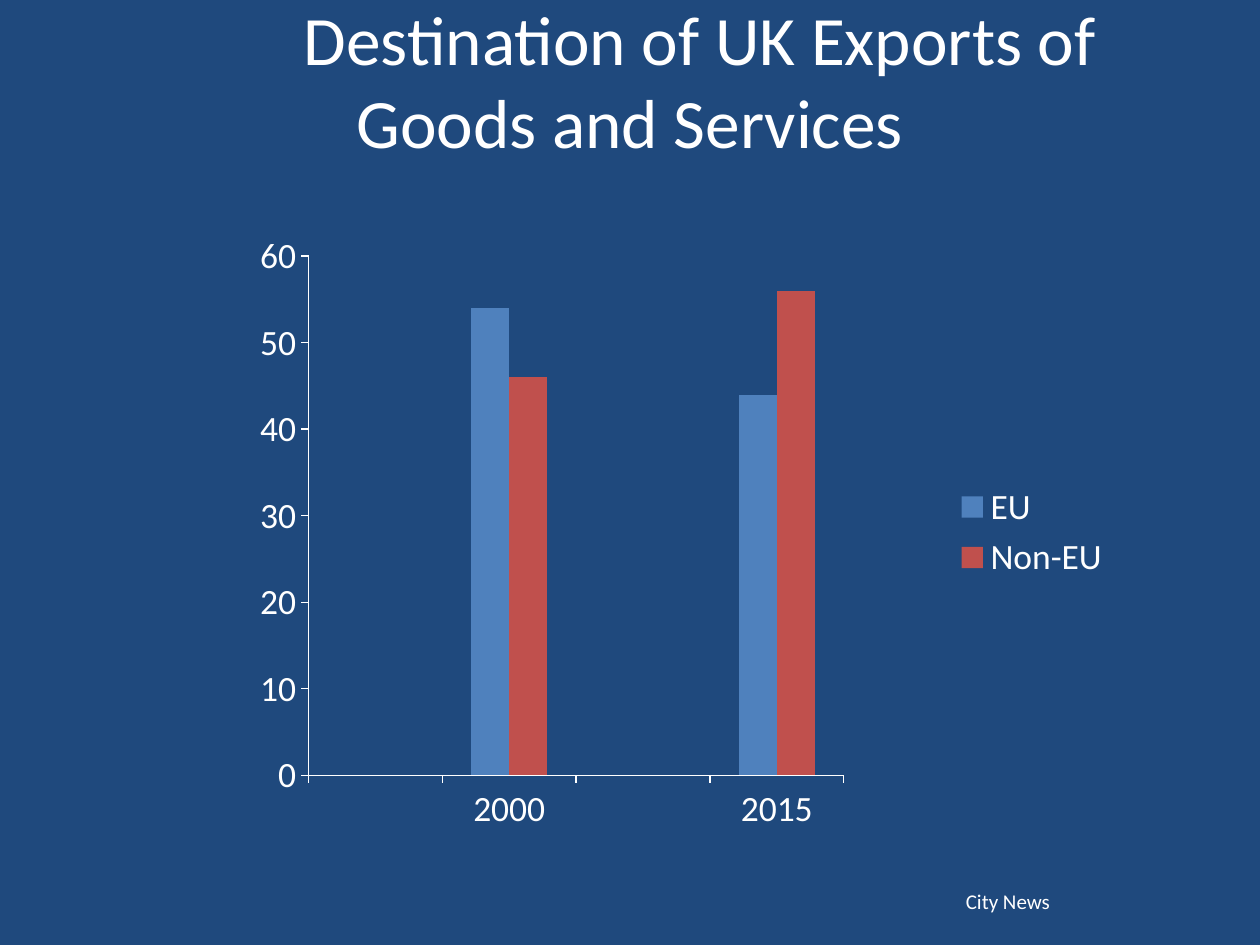
import pptx
import pptx.chart.data
from lxml import etree
from pptx.dml.color import RGBColor
from pptx.enum.chart import XL_CHART_TYPE, XL_LEGEND_POSITION, XL_TICK_MARK
from pptx.enum.text import MSO_ANCHOR, PP_ALIGN
from pptx.oxml.ns import qn
from pptx.util import Inches, Pt

FONT = "Calibri"
COLORS = {
    "background": "1F497D",
    "text": "FFFFFF",
    "EU": "4F81BD",
    "Non-EU": "C0504D",
}
EXPORT_SHARES = {
    "EU": [None, 54, None, 44],
    "Non-EU": [None, 46, None, 56],
}
PLOT_AREA = {"x": 0.281, "y": 0.057, "w": 0.472, "h": 0.833}


def rgb(name):
    return RGBColor.from_string(COLORS[name])


def style_font(font, size):
    font.name = FONT
    font.size = Pt(size)
    font.color.rgb = rgb("text")


def add_text(s, text, left, top, width, height, size):
    sp = s.shapes.add_textbox(Inches(left), Inches(top), Inches(width), Inches(height))
    tf = sp.text_frame
    tf.word_wrap = True
    tf.vertical_anchor = MSO_ANCHOR.MIDDLE
    tf.text = text
    p = tf.paragraphs[0]
    p.alignment = PP_ALIGN.CENTER
    style_font(p.runs[0].font, size)
    return tf


def add_title(s, text):
    """Add the title, raised in its box, with its first line indented."""
    tf = add_text(s, text, 0.5, 0.3, 9, 1.25, 39.6)
    tf.margin_bottom = Inches(0.64)
    pPr = tf.paragraphs[0].runs[0].font._element.getparent().getparent().get_or_add_pPr()
    pPr.set("marL", "0")
    pPr.set("indent", str(Inches(1.11)))


def set_plot_layout(chart):
    """Fix the inner plot area as fractions of the chart."""
    plot_area = chart._chartSpace.chart.plotArea
    for old in plot_area.findall(qn("c:layout")):
        plot_area.remove(old)
    layout = etree.Element(qn("c:layout"))
    plot_area.insert(0, layout)
    manual = etree.SubElement(layout, qn("c:manualLayout"))
    settings = {"layoutTarget": "inner", "xMode": "edge", "yMode": "edge", **PLOT_AREA}
    for tag, value in settings.items():
        etree.SubElement(manual, qn(f"c:{tag}")).set("val", str(value))


def add_export_chart(s):
    data = pptx.chart.data.CategoryChartData()
    data.categories = ["", "2000", "", "2015"]
    for name, values in EXPORT_SHARES.items():
        data.add_series(name, values)
    chart = s.shapes.add_chart(
        XL_CHART_TYPE.COLUMN_CLUSTERED,
        Inches(-0.08), Inches(1.75), Inches(9), Inches(4.95), data,
    ).chart
    style_font(chart.font, 20.3)
    chart.has_title = False
    chart.has_legend = True
    chart.legend.position = XL_LEGEND_POSITION.RIGHT
    chart.legend.include_in_layout = False

    for axis in (chart.category_axis, chart.value_axis):
        axis.has_major_gridlines = False
        axis.major_tick_mark = XL_TICK_MARK.OUTSIDE
        axis.format.line.color.rgb = rgb("text")
        axis.format.line.width = Pt(0.75)
    chart.value_axis.minimum_scale = 0
    chart.value_axis.maximum_scale = 60
    chart.value_axis.major_unit = 10

    plot = chart.plots[0]
    plot.gap_width = 150
    plot.overlap = 0
    plot.vary_by_categories = False
    for series in plot.series:
        series.format.fill.solid()
        series.format.fill.fore_color.rgb = rgb(series.name)
    set_plot_layout(chart)


def main():
    prs = pptx.Presentation()
    prs.slide_width = Inches(10)
    prs.slide_height = Inches(7.5)
    s = prs.slides.add_slide(prs.slide_layouts[6])
    s.background.fill.solid()
    s.background.fill.fore_color.rgb = rgb("background")
    add_title(s, "Destination of UK Exports of Goods and Services")
    add_export_chart(s)
    add_text(s, "City News", 6.58, 6.95, 2.84, 0.4, 12)
    prs.save("out.pptx")


if __name__ == "__main__":
    main()
